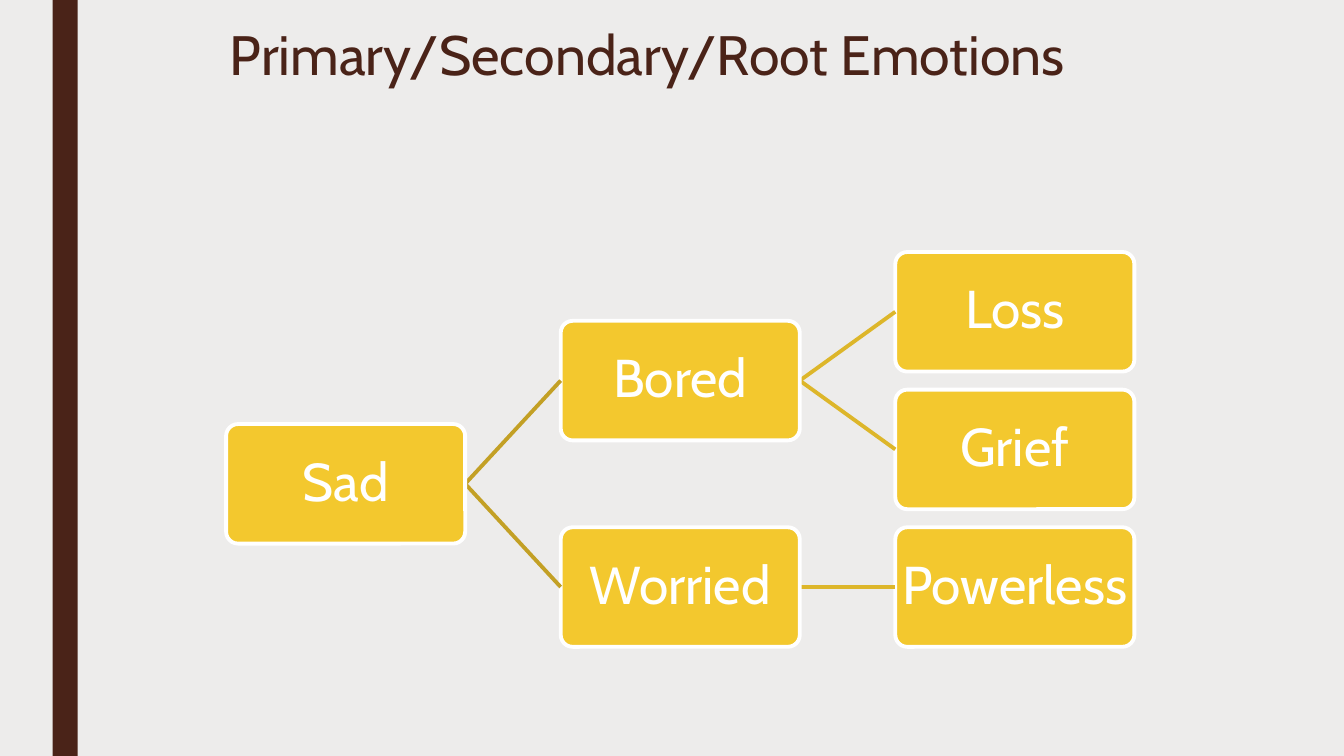
from dataclasses import dataclass

from lxml import etree
from pptx import Presentation
from pptx.dml.color import RGBColor
from pptx.enum.shapes import MSO_CONNECTOR, MSO_SHAPE
from pptx.enum.text import MSO_ANCHOR, PP_ALIGN
from pptx.oxml.ns import qn
from pptx.util import Pt

RECTANGLE = MSO_SHAPE.RECTANGLE
ROUNDED = MSO_SHAPE.ROUNDED_RECTANGLE
STRAIGHT = MSO_CONNECTOR.STRAIGHT
CENTER = PP_ALIGN.CENTER
MIDDLE = MSO_ANCHOR.MIDDLE


@dataclass(frozen=True)
class Theme:
    font: str = "Cabin"
    background: RGBColor = RGBColor(0xED, 0xEC, 0xEB)
    brown: RGBColor = RGBColor(0x4A, 0x23, 0x18)
    yellow: RGBColor = RGBColor(0xF3, 0xC8, 0x2E)
    white: RGBColor = RGBColor(0xFF, 0xFF, 0xFF)
    branch_colors: tuple = (RGBColor(0xC3, 0xA0, 0x25), RGBColor(0xDD, 0xB6, 0x2A))
    title_size: float = 39.6
    node_size: float = 38
    line_width: float = 2.75


@dataclass(frozen=True)
class Box:
    left: float
    top: float
    width: float
    height: float

    def lengths(self):
        return Pt(self.left), Pt(self.top), Pt(self.width), Pt(self.height)


THEME = Theme()
NODE_WIDTH, NODE_HEIGHT = 170.8, 85.4
EMOTIONS = ("Sad", [
    ("Bored", [("Loss", []), ("Grief", [])]),
    ("Worried", [("Powerless", [])]),
])


def write_text(frame, text, size, color, spacing, inset):
    frame.margin_left = frame.margin_right = Pt(inset)
    frame.margin_top = frame.margin_bottom = Pt(inset)
    frame.vertical_anchor = MIDDLE
    paragraph = frame.paragraphs[0]
    paragraph.alignment = CENTER
    paragraph.line_spacing = spacing
    run = paragraph.add_run()
    run.text = text
    run.font.name = THEME.font
    run.font.size = Pt(size)
    run.font.color.rgb = color


def add_side_bar(slide, box):
    shape = slide.shapes.add_shape(RECTANGLE, *box.lengths())
    shape.shadow.inherit = False
    shape.fill.solid()
    shape.fill.fore_color.rgb = THEME.brown
    shape.line.fill.background()


def add_title(slide, box, text):
    frame = slide.shapes.add_textbox(*box.lengths()).text_frame
    frame.word_wrap = True
    write_text(frame, text, THEME.title_size, THEME.brown, 0.89, 3.6)


def add_node(slide, box, text):
    shape = slide.shapes.add_shape(ROUNDED, *box.lengths())
    shape.shadow.inherit = False
    shape.adjustments[0] = 0.1
    shape.fill.solid()
    shape.fill.fore_color.rgb = THEME.yellow
    shape.line.color.rgb = THEME.white
    shape.line.width = Pt(THEME.line_width)
    shape.text_frame.word_wrap = False
    write_text(shape.text_frame, text, THEME.node_size, THEME.white, 0.9, 2.4)


def add_branch(slide, parent, child, color):
    connector = slide.shapes.add_connector(
        STRAIGHT,
        Pt(parent.left + parent.width), Pt(parent.top + parent.height / 2),
        Pt(child.left), Pt(child.top + child.height / 2),
    )
    connector.line.color.rgb = color
    connector.line.width = Pt(THEME.line_width)
    etree.SubElement(connector._element.spPr, qn("a:effectLst"))


def count_leaves(node):
    return sum(map(count_leaves, node[1])) or 1


def count_levels(node):
    return 1 + max(map(count_levels, node[1]), default=0)


def add_tree(slide, box, root):
    column_step = (box.width - NODE_WIDTH) / (count_levels(root) - 1)
    row_step = (box.height - NODE_HEIGHT) / (count_leaves(root) - 1)

    def place(node, level, first_row):
        text, children = node
        child_boxes = []
        row = first_row
        for child in children:
            child_boxes.append(place(child, level + 1, row))
            row += count_leaves(child)
        if child_boxes:
            top = (child_boxes[0].top + child_boxes[-1].top) / 2
        else:
            top = box.top + first_row * row_step
        node_box = Box(box.left + level * column_step, top, NODE_WIDTH, NODE_HEIGHT)
        for child_box in child_boxes:
            add_branch(slide, node_box, child_box, THEME.branch_colors[level])
        add_node(slide, node_box, text)
        return node_box

    place(root, 0, 0)


def main():
    presentation = Presentation()
    presentation.slide_width, presentation.slide_height = Pt(960), Pt(540)
    slide = presentation.slides.add_slide(presentation.slide_layouts[6])
    slide.background.fill.solid()
    slide.background.fill.fore_color.rgb = THEME.background
    add_side_bar(slide, Box(37.5, 0, 18, 540))
    add_title(slide, Box(39.6, 16.2, 854.6, 50.4), "Primary/Secondary/Root Emotions ")
    add_tree(slide, Box(161.5, 180, 648.8, 282), EMOTIONS)
    presentation.save("out.pptx")


if __name__ == "__main__":
    main()
